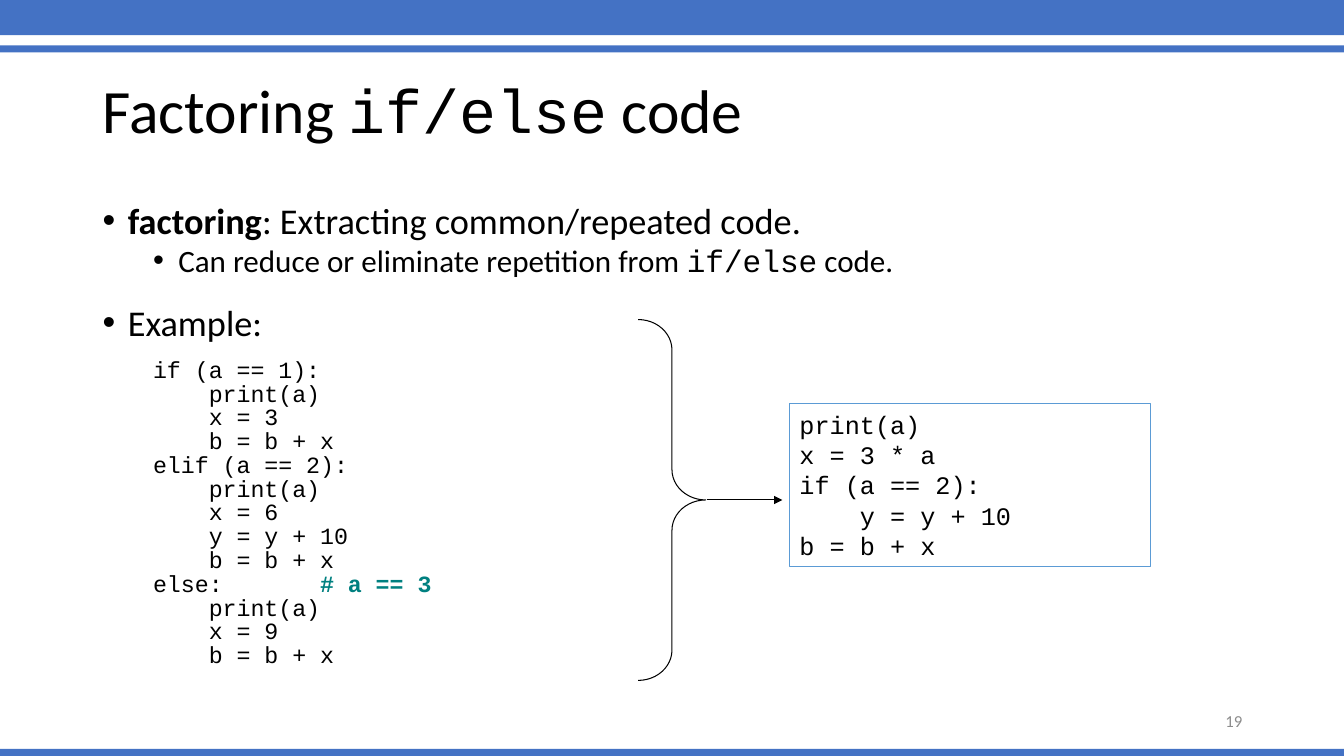
from lxml import etree
from pptx import Presentation
from pptx.dml.color import RGBColor
from pptx.enum import shapes, text
from pptx.oxml import ns
from pptx.util import Inches, Pt

COLORS = {"bar": "4472C4", "ink": "000000", "comment": "008080",
          "frame": "5B9BD5", "number": "8C8C8C"}
BODY, CODE = "Calibri", "Courier New"
BRANCHES = [
    "if (a == 1):", "    print(a)", "    x = 3", "    b = b + x",
    "elif (a == 2):", "    print(a)", "    x = 6", "    y = y + 10", "    b = b + x",
    "else:       ", "    print(a)", "    x = 9", "    b = b + x",
]
FACTORED = ["print(a)", "x = 3 * a", "if (a == 2):", "    y = y + 10", "b = b + x"]


def color(name):
    """Return the named colour."""
    return RGBColor.from_string(COLORS[name])


def add_preset(page, kind, place, fill=None, line=None):
    """Add a flat preset shape at place, given in inches."""
    shape = page.shapes.add_shape(kind, *map(Inches, place))
    shape.shadow.inherit = False
    if fill:
        shape.fill.solid()
        shape.fill.fore_color.rgb = color(fill)
    else:
        shape.fill.background()
    if line:
        shape.line.color.rgb = color(line)
        shape.line.width = Pt(0.75)
    else:
        shape.line.fill.background()
    return shape


def add_box(page, place, anchor):
    """Add a wrapping text box and return its text frame."""
    frame = page.shapes.add_textbox(*map(Inches, place)).text_frame
    frame.word_wrap = True
    frame.vertical_anchor = anchor
    return frame


def add_para(frame, pieces, size, face=BODY, spacing=None, before=0, ink="ink"):
    """Add a paragraph of (words, font changes) pieces."""
    para = frame.paragraphs[0]
    if para.runs:
        para = frame.add_paragraph()
    para.alignment = text.PP_ALIGN.LEFT
    para.space_before = Pt(before)
    para.line_spacing = spacing
    para.font.size = Pt(size)
    para.font.name = face
    para.font.color.rgb = color(ink)
    for words, changes in pieces:
        span = para.add_run()
        span.text = words
        for key, value in changes.items():
            setattr(span.font, key, value)
    return para


def indent(para, left, bullet=False):
    """Set the left margin in inches, with a hanging bullet if asked."""
    props = para._p.get_or_add_pPr()
    props.set("marL", str(Inches(left)))
    props.set("indent", str(Inches(-0.25 if bullet else 0)))
    if bullet:
        font = etree.SubElement(props, ns.qn("a:buFont"), typeface="Arial")
        font.addnext(etree.Element(ns.qn("a:buChar"), char="•"))
        defaults = props.find(ns.qn("a:defRPr"))
        if defaults is not None:
            props.append(defaults)


def add_arrow(page, start, end):
    """Add a thin straight arrow between two points in inches."""
    arrow = page.shapes.add_connector(
        shapes.MSO_CONNECTOR.STRAIGHT, *map(Inches, start + end))
    arrow.line.color.rgb = color("ink")
    arrow.line.width = Pt(0.75)
    etree.SubElement(arrow.line._get_or_add_ln(), ns.qn("a:tailEnd"), type="triangle")
    etree.SubElement(arrow._element.spPr, ns.qn("a:effectLst"))


def add_body(page):
    """Add the bullets and the repetitive code."""
    frame = add_box(page, (0.92, 2, 11.5, 4.76), text.MSO_ANCHOR.TOP)
    bullets = [
        ([("factoring", {"bold": True}), (": Extracting common/repeated code.", {})],
         25.9, 0.25, 10),
        ([("Can reduce or eliminate repetition from ", {}), ("if/else", {"name": CODE}),
          (" code.", {})], 22.2, 0.75, 5),
        ([("Example:", {})], 25.9, 0.25, 22),
    ]
    for pieces, size, left, before in bullets:
        indent(add_para(frame, pieces, size, spacing=0.8, before=before), left, True)
    for index, line in enumerate(BRANCHES):
        para = add_para(frame, [(line, {})], 16.6, CODE, Pt(12), 5 if index else 16)
        indent(para, 0.5)
        if line.startswith("else"):
            note = para.add_run()
            note.text = "# a == 3"
            note.font.bold = True
            note.font.color.rgb = color("comment")


def add_result(page):
    """Add the brace, the arrow and the factored code."""
    rect = shapes.MSO_SHAPE.RECTANGLE
    frame = add_preset(page, rect, (7.83, 4, 3.58, 1.62), line="frame").text_frame
    frame.vertical_anchor = text.MSO_ANCHOR.MIDDLE
    for line in FACTORED:
        add_para(frame, [(line, {})], 18, CODE, Pt(21.6))
    add_arrow(page, (7.01, 4.96), (7.76, 4.96))
    brace = add_preset(page, shapes.MSO_SHAPE.RIGHT_BRACE, (6.33, 3.17, 0.67, 3.58),
                       line="ink")
    brace.adjustments[0] = 0.45
    brace.adjustments[1] = 0.5


def main():
    """Build the slide and save it."""
    deck = Presentation()
    deck.slide_width, deck.slide_height = Inches(13.33), Inches(7.5)
    page = deck.slides.add_slide(deck.slide_layouts[6])
    for top, height in ((-0.03, 0.38), (0.45, 0.07), (7.43, 0.07)):
        add_preset(page, shapes.MSO_SHAPE.RECTANGLE, (0, top, 13.33, height), fill="bar")
    title = add_box(page, (0.92, 0.4, 11.5, 1.45), text.MSO_ANCHOR.MIDDLE)
    add_para(title, [("Factoring ", {}), ("if/else", {"name": CODE}), (" code", {})],
             44, spacing=0.9)
    add_body(page)
    add_result(page)
    number = add_box(page, (9.42, 6.95, 3, 0.4), text.MSO_ANCHOR.MIDDLE)
    para = add_para(number, [("19", {})], 12, ink="number")
    para.alignment = text.PP_ALIGN.RIGHT
    deck.save("out.pptx")


if __name__ == "__main__":
    main()
